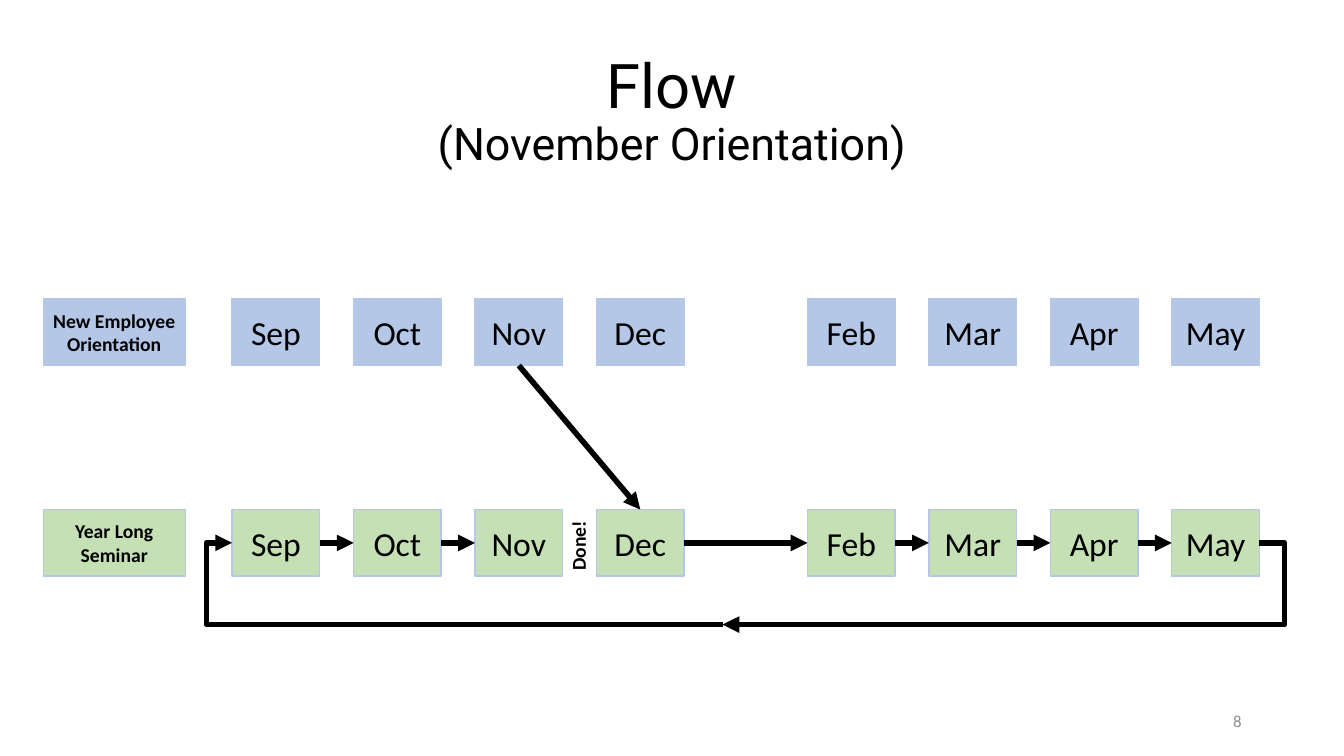
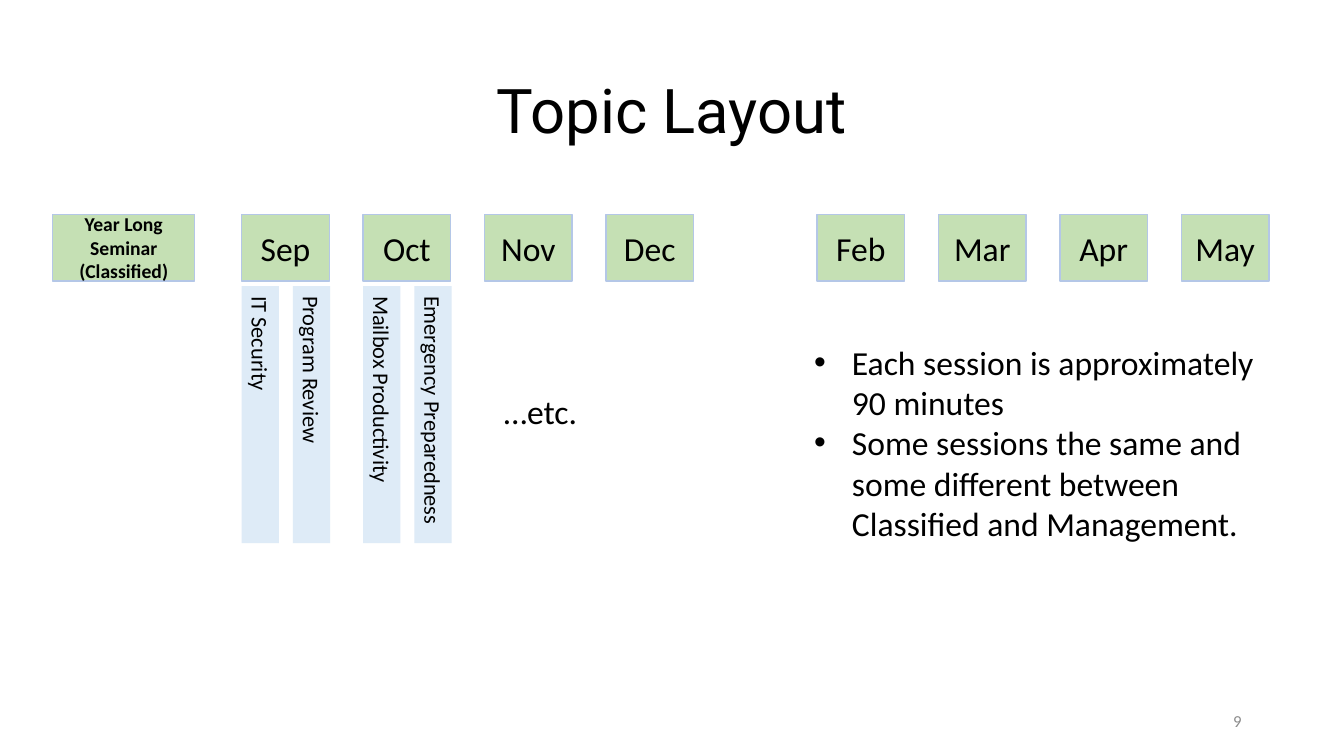
from lxml.etree import SubElement
from pptx import Presentation
from pptx.dml.color import RGBColor
from pptx.enum.shapes import MSO_CONNECTOR, MSO_SHAPE
from pptx.enum.text import MSO_ANCHOR, PP_ALIGN
from pptx.oxml.ns import qn
from pptx.util import Cm, Pt

BLACK = RGBColor(0x00, 0x00, 0x00)
GRAY = RGBColor(0x8C, 0x8C, 0x8C)
BLUE = RGBColor(0xB4, 0xC7, 0xE7)
GREEN = RGBColor(0xC5, 0xE0, 0xB4)
PALE_BLUE = RGBColor(0xDE, 0xEB, 0xF7)

TITLE = {"name": "Roboto", "size": Pt(44)}
SUBTITLE = {"name": "Roboto", "size": Pt(32)}
BODY = {"name": "Calibri", "size": Pt(24)}
LABEL = {"name": "Calibri", "size": Pt(14), "bold": True}
TOPIC = {"name": "Calibri", "size": Pt(16)}
FOOTER = {"name": "Calibri", "size": Pt(12)}

MONTHS = ["Sep", "Oct", "Nov", "Dec", "Feb", "Mar", "Apr", "May"]
ROW_HEIGHT = Cm(1.68)
LABEL_WIDTH = Cm(3.58)
MONTH_WIDTH = Cm(2.21)
MONTH_PITCH = Cm(3.06)
MONTHS_OFFSET = Cm(4.76)
WINTER_BREAK = Cm(2.26)
BOTTOM, LEFT, RIGHT, TOP = 2, 1, 3, 0  # connection sites of a rectangle


def set_font(font, style, color=BLACK):
    for name, value in style.items():
        setattr(font, name, value)
    font.color.rgb = color


def write_text(shape, lines, style, color=BLACK, align=PP_ALIGN.LEFT,
               anchor=MSO_ANCHOR.TOP, bullet=False):
    frame = shape.text_frame
    frame.word_wrap = True
    frame.vertical_anchor = anchor
    frame.text = "\n".join(lines)
    for paragraph in frame.paragraphs:
        paragraph.alignment = align
        if bullet:
            properties = paragraph._p.get_or_add_pPr()
            properties.set("marL", str(Cm(0.95)))
            properties.set("indent", str(-Cm(0.95)))
            SubElement(properties, qn("a:buFont"), typeface="Arial")
            SubElement(properties, qn("a:buChar"), char="•")
        for run in paragraph.runs:
            set_font(run.font, style, color)


def add_text(slide, box, lines, style, **options):
    shape = slide.shapes.add_textbox(*box)
    write_text(shape, lines, style, **options)
    return shape


def add_rectangle(slide, box, fill, outline=None):
    shape = slide.shapes.add_shape(MSO_SHAPE.RECTANGLE, *box)
    shape.shadow.inherit = False
    shape.fill.solid()
    shape.fill.fore_color.rgb = fill
    if outline is None:
        shape.line.fill.background()
    else:
        shape.line.color.rgb = outline
        shape.line.width = Pt(1)
    return shape


def add_cell(slide, box, lines, style, fill):
    shape = add_rectangle(slide, box, fill, BLUE)
    write_text(shape, lines, style, align=PP_ALIGN.CENTER, anchor=MSO_ANCHOR.MIDDLE)
    return shape


def add_arrow(slide, start, end, kind=MSO_CONNECTOR.STRAIGHT):
    arrow = slide.shapes.add_connector(kind, *start, *end)
    arrow.line.color.rgb = BLACK
    arrow.line.width = Pt(4)
    SubElement(arrow.line._get_or_add_ln(), qn("a:tailEnd"), type="triangle")
    SubElement(arrow._element.spPr, qn("a:effectLst"))
    return arrow


def link_cells(slide, source, source_site, target, target_site):
    arrow = add_arrow(slide, (0, 0), (0, 0))
    arrow.begin_connect(source, source_site)
    arrow.end_connect(target, target_site)


def add_elbow(slide, start, end, bend):
    """Bent arrow whose middle leg lies at the given share of its width."""
    arrow = add_arrow(slide, start, end, MSO_CONNECTOR.ELBOW)
    geometry = arrow._element.spPr.find(qn("a:prstGeom"))
    adjustments = geometry.find(qn("a:avLst"))
    if adjustments is None:
        adjustments = SubElement(geometry, qn("a:avLst"))
    SubElement(adjustments, qn("a:gd"), name="adj1", fmla=f"val {round(bend * 100000)}")


def add_month_row(slide, left, top, label, fill):
    """Draw the label and its months; return the month cells by name."""
    add_cell(slide, (left, top, LABEL_WIDTH, ROW_HEIGHT), label, LABEL, fill)
    cells = {}
    for index, month in enumerate(MONTHS):
        x = left + MONTHS_OFFSET + index * MONTH_PITCH
        if index >= MONTHS.index("Feb"):
            x += WINTER_BREAK
        box = (x, top, MONTH_WIDTH, ROW_HEIGHT)
        cells[month] = add_cell(slide, box, [month], BODY, fill)
    return cells


def add_return_loop(slide, first, last):
    """Lead from the last month back under the row to the first."""
    reach = Cm(0.64)
    middle = first.top + first.height // 2
    start = (last.left + last.width, middle)
    end = (first.left, middle)
    halfway = (Cm(18.21), middle + Cm(2.06))
    add_elbow(slide, start, halfway, -reach / (start[0] - halfway[0]))
    add_elbow(slide, halfway, end, 1 + reach / (halfway[0] - end[0]))


def add_topics(slide, month, topics):
    """Hang vertical topic strips below a month cell."""
    length, thickness, pitch = Cm(6.48), Cm(0.94), Cm(1.29)
    center_y = month.top + month.height + Cm(0.13) + length // 2
    for index, topic in enumerate(topics):
        center_x = month.left + index * pitch + thickness // 2
        box = (center_x - length // 2, center_y - thickness // 2, length, thickness)
        strip = add_rectangle(slide, box, PALE_BLUE)
        strip.rotation = 90
        write_text(strip, [topic], TOPIC)


def add_titled_slide(presentation, title, number, subtitle=None):
    slide = presentation.slides.add_slide(presentation.slide_layouts[5])
    shape = slide.shapes.title
    shape.left, shape.top, shape.width, shape.height = Cm(2.33), Cm(1.01), Cm(29.21), Cm(3.68)
    write_text(shape, [title], TITLE, align=PP_ALIGN.CENTER, anchor=MSO_ANCHOR.MIDDLE)
    paragraph = shape.text_frame.paragraphs[0]
    paragraph.line_spacing = 0.9
    if subtitle:
        paragraph.add_line_break()
        run = paragraph.add_run()
        run.text = subtitle
        set_font(run.font, SUBTITLE)
    add_text(slide, (Cm(23.92), Cm(17.65), Cm(7.62), Cm(1.01)), [str(number)], FOOTER,
             color=GRAY, align=PP_ALIGN.RIGHT, anchor=MSO_ANCHOR.MIDDLE)
    return slide


def build_flow_slide(presentation):
    slide = add_titled_slide(presentation, "Flow", 8, "(November Orientation)")
    left = Cm(1.09)
    orientation = add_month_row(slide, left, Cm(7.53), ["New Employee Orientation"], BLUE)
    seminar = add_month_row(slide, left, Cm(12.84), ["Year Long Seminar"], GREEN)
    link_cells(slide, orientation["Nov"], BOTTOM, seminar["Dec"], TOP)
    for source, target in zip(MONTHS, MONTHS[1:]):
        if source != "Nov":
            link_cells(slide, seminar[source], RIGHT, seminar[target], LEFT)
    add_return_loop(slide, seminar["Sep"], seminar["May"])
    done = add_text(slide, (Cm(13.61), Cm(13.23), Cm(1.93), Cm(0.86)), ["Done!"], LABEL)
    done.rotation = 270


def build_topic_slide(presentation):
    slide = add_titled_slide(presentation, "Topic Layout", 9)
    label = ["Year Long Seminar", "(Classified)"]
    seminar = add_month_row(slide, Cm(1.33), Cm(5.4), label, GREEN)
    add_topics(slide, seminar["Sep"], ["IT Security", "Program Review"])
    add_topics(slide, seminar["Oct"], ["Mailbox Productivity", "Emergency Preparedness"])
    add_text(slide, (Cm(12.45), Cm(9.73), Cm(4.47), Cm(1.27)), ["…etc."], BODY)
    notes = [
        "Each session is approximately 90 minutes",
        "Some sessions the same and some different between Classified and Management.",
    ]
    add_text(slide, (Cm(20.27), Cm(8.48), Cm(11.71), Cm(5.38)), notes, BODY, bullet=True)


def main():
    presentation = Presentation()
    presentation.slide_width, presentation.slide_height = Cm(33.87), Cm(19.05)
    build_flow_slide(presentation)
    build_topic_slide(presentation)
    presentation.save("out.pptx")


if __name__ == "__main__":
    main()
